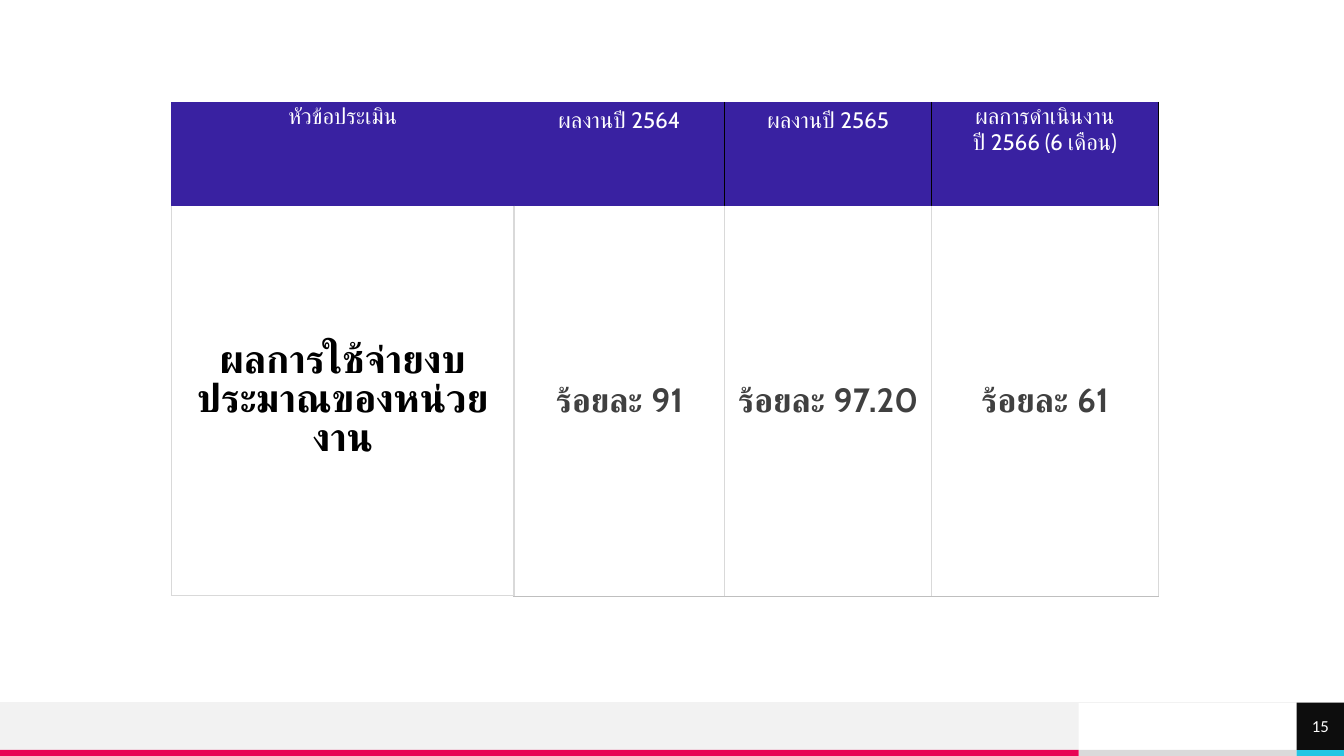
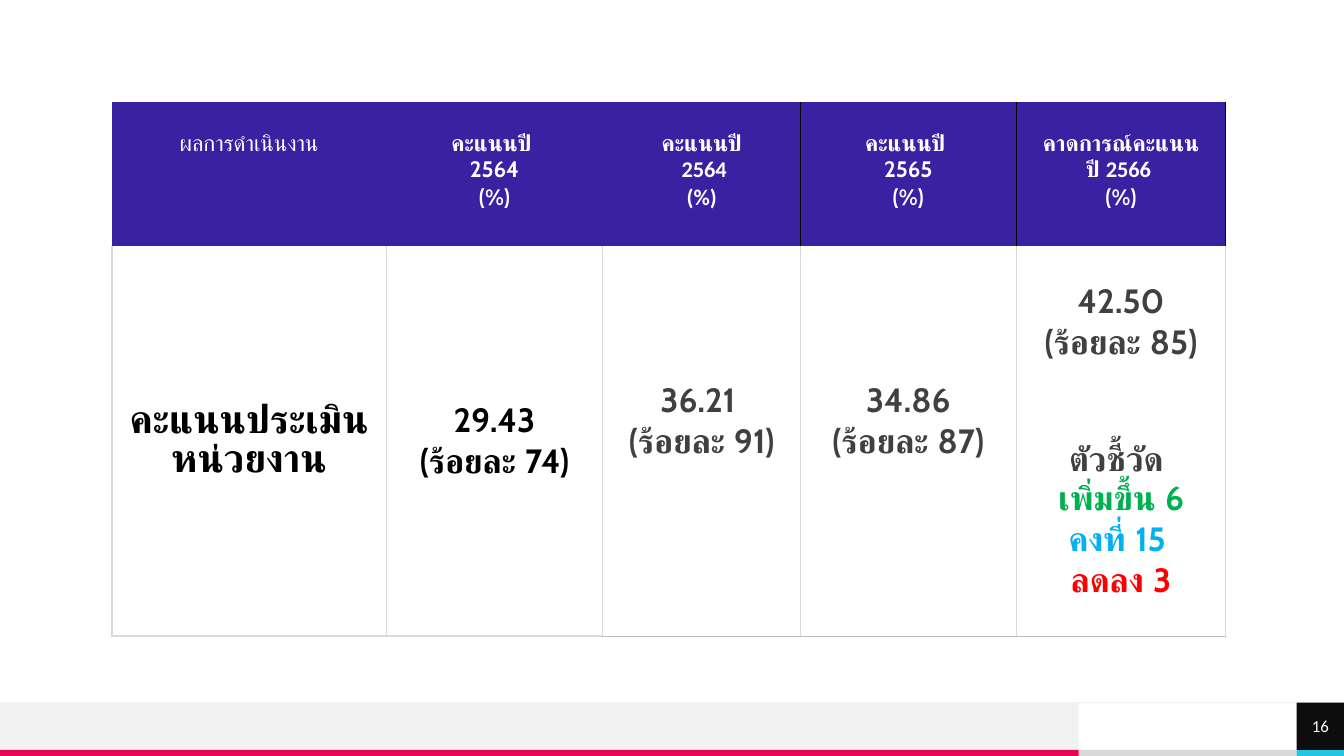
import dataclasses
import typing

import lxml.etree
import pptx
import pptx.dml.color
import pptx.enum.shapes
import pptx.enum.text
import pptx.oxml.ns
import pptx.util

Align = pptx.enum.text.PP_ALIGN
Anchor = pptx.enum.text.MSO_ANCHOR
Shape = pptx.enum.shapes.MSO_SHAPE
WIDE, TALL = pptx.util.Inches(13.33), pptx.util.Inches(7.5)


# Theme: colours, fonts and type sizes
@dataclasses.dataclass(frozen=True)
class Theme:
    white: str = "FFFFFF"
    black: str = "000000"
    ink: str = "0D0D0D"
    gray: str = "404040"
    pale: str = "F2F2F2"
    strip: str = "DADADA"
    rule: str = "D9D9D9"
    base: str = "BFBFBF"
    pink: str = "E80554"
    cyan: str = "25C6E3"
    head: str = "3921A1"
    green: str = "00B050"
    blue: str = "00B0F0"
    red: str = "FF0000"
    face: str = "Cabin"
    plain: str = "Calibri"
    title: int = 28
    big: int = 24
    mid: int = 16
    small: int = 12


T = Theme()


# Boxes are shares of the slide, in percent
class Box(typing.NamedTuple):
    left: float
    top: float
    width: float
    height: float


class Bar(typing.NamedTuple):
    box: Box
    color: str


class Line(typing.NamedTuple):
    text: str
    color: str
    size: int
    bold: bool = True
    face: str = T.face
    gap: int = 0


Cell = list[Line]


@dataclasses.dataclass(frozen=True)
class Grid:
    left: float
    cols: list[float]
    rows: list[float]
    pad: float
    heads: list[Cell]
    body: list[Cell]
    lifts: tuple[int, ...] = ()


SPLIT, EDGE = 80.25, 96.48
BAND, FOOT = 92.93, 99.2
TOP = 13.47
LIFT = 6
BARS = [
    Bar(Box(SPLIT, FOOT, EDGE - SPLIT, 100 - FOOT), T.strip),
    Bar(Box(0, BAND, SPLIT, FOOT - BAND), T.pale),
    Bar(Box(0, FOOT, SPLIT, 100 - FOOT), T.pink),
    Bar(Box(EDGE, FOOT, 100 - EDGE, 100 - FOOT), T.cyan),
]
PAGE = Bar(Box(EDGE, BAND, 100 - EDGE, FOOT - BAND), T.ink)


def across(share: float) -> int:
    return round(WIDE * share / 100)


def down(share: float) -> int:
    return round(TALL * share / 100)


def place(box: Box) -> tuple[int, int, int, int]:
    return across(box.left), down(box.top), across(box.width), down(box.height)


def tint(code: str) -> pptx.dml.color.RGBColor:
    return pptx.dml.color.RGBColor.from_string(code)


def style(run, size: int, color: str, bold: bool, face: str) -> None:
    run.font.size = pptx.util.Pt(size)
    run.font.color.rgb = tint(color)
    run.font.bold = bold
    run.font.name = face


# Footer parts
def draw_bar(slide, bar: Bar):
    shape = slide.shapes.add_shape(Shape.RECTANGLE, *place(bar.box))
    shape.shadow.inherit = False
    shape.fill.solid()
    shape.fill.fore_color.rgb = tint(bar.color)
    shape.line.fill.background()
    return shape


def draw_foot(slide, page: int) -> None:
    for bar in BARS:
        draw_bar(slide, bar)
    line = slide.shapes.add_connector(
        pptx.enum.shapes.MSO_CONNECTOR.STRAIGHT, WIDE, down(BAND), 0, down(BAND))
    line.line.color.rgb = tint(T.pale)
    line.line.width = pptx.util.Pt(0.5)
    lxml.etree.SubElement(line._element.spPr, pptx.oxml.ns.qn("a:effectLst"))

    frame = draw_bar(slide, PAGE).text_frame
    frame.margin_left = frame.margin_right = 0
    frame.margin_top = frame.margin_bottom = 0
    frame.vertical_anchor = Anchor.MIDDLE
    frame.text = str(page)
    para = frame.paragraphs[0]
    para.alignment = Align.CENTER
    style(para.runs[0], T.small, T.white, False, T.plain)


# Table parts
Edge = typing.Optional[tuple[str, float]]


def draw_edge(cell, side: str, edge: Edge) -> None:
    qn = pptx.oxml.ns.qn
    props = cell._tc.get_or_add_tcPr()
    line = lxml.etree.SubElement(props, qn(f"a:ln{side}"))
    if edge is None:
        lxml.etree.SubElement(line, qn("a:noFill"))
        return
    color, width = edge
    line.set("w", str(pptx.util.Pt(width)))
    fill = lxml.etree.SubElement(line, qn("a:solidFill"))
    lxml.etree.SubElement(fill, qn("a:srgbClr")).set("val", color)


def fill_cell(cell, lines: Cell, edges: dict[str, Edge], color: str) -> None:
    for side in "LRTB":
        draw_edge(cell, side, edges.get(side))
    cell.fill.solid()
    cell.fill.fore_color.rgb = tint(color)
    cell.text_frame.text = "\n".join(line.text for line in lines)
    for para, line in zip(cell.text_frame.paragraphs, lines):
        para.alignment = Align.CENTER
        para.space_before = pptx.util.Pt(line.gap)
        style(para.runs[0], line.size, line.color, line.bold, line.face)


def draw_grid(slide, grid: Grid) -> None:
    count = len(grid.cols)
    box = Box(grid.left, TOP, sum(grid.cols), sum(grid.rows))
    table = slide.shapes.add_table(2, count, *place(box)).table
    table.horz_banding = False
    for col, share in zip(table.columns, grid.cols):
        col.width = across(share)
    for row, share in zip(table.rows, grid.rows):
        row.height = down(share)
    dark, light = (T.black, 1), (T.rule, 1)
    lead = count - 3
    for col in range(count):
        top, low = table.cell(0, col), table.cell(1, col)
        top.margin_top = down(grid.pad)
        low.vertical_anchor = Anchor.MIDDLE
        if col in grid.lifts:
            low.margin_bottom = down(LIFT)
        fill_cell(top, grid.heads[col],
                  {"L": dark if col > lead else None,
                   "R": dark if col >= lead else None}, T.head)
        fill_cell(low, grid.body[col],
                  {"L": light, "R": light,
                   "B": light if col < lead else (T.base, 0.25)}, T.white)


# Wording
def head(*texts: str, bold: bool = False, face: str = T.face) -> Cell:
    return [Line(text, T.white, T.mid, bold, face) for text in texts]


def body(*texts: str, color: str = T.gray, size: int = T.big) -> Cell:
    return [Line(text, color, size) for text in texts]


SPEND = Grid(
    left=12.75, cols=[25.5, 15.68, 15.38, 16.88], rows=[13.73, 51.6], pad=0.67,
    heads=[head("หัวข้อประเมิน"), head("ผลงานปี 2564"), head("ผลงานปี 2565"),
           head("ผลการดำเนินงาน", "ปี 2566 (6 เดือน)")],
    body=[body("ผลการใช้จ่ายงบประมาณของหน่วยงาน", color=T.black, size=T.title),
          body("ร้อยละ 91"), body("ร้อยละ 97.20"), body("ร้อยละ 61")],
)
SCORE = Grid(
    left=8.33, cols=[20.4, 16.13, 14.7, 16.05, 15.6], rows=[19.07, 51.6], pad=4.27,
    heads=[head("ผลการดำเนินงาน"),
           head("คะแนนปี ", "2564", "(%)", bold=True),
           head("คะแนนปี", " 2564", "(%)", bold=True, face=T.plain),
           head("คะแนนปี ", "2565", "(%)", bold=True),
           head("คาดการณ์คะแนน", "ปี 2566 ", bold=True, face=T.plain)
           + head("(%)", bold=True)],
    body=[body("คะแนนประเมินหน่วยงาน", color=T.black, size=T.title),
          body("29.43", "(ร้อยละ 74)", color=T.black),
          body("36.21 ", "(ร้อยละ 91)"),
          body("34.86", "(ร้อยละ 87)"),
          body("42.50", "(ร้อยละ 85)")
          + [Line("ตัวชี้วัด ", T.gray, T.big, gap=58)]
          + body("เพิ่มขึ้น 6", color=T.green)
          + body("คงที่ 15 ", color=T.blue)
          + body("ลดลง 3", color=T.red)],
    lifts=(2, 3),
)


def main() -> None:
    deck = pptx.Presentation()
    deck.slide_width, deck.slide_height = WIDE, TALL
    for page, grid in enumerate((SPEND, SCORE), start=15):
        slide = deck.slides.add_slide(deck.slide_layouts[6])
        draw_foot(slide, page)
        draw_grid(slide, grid)
    deck.save("out.pptx")


if __name__ == "__main__":
    main()
